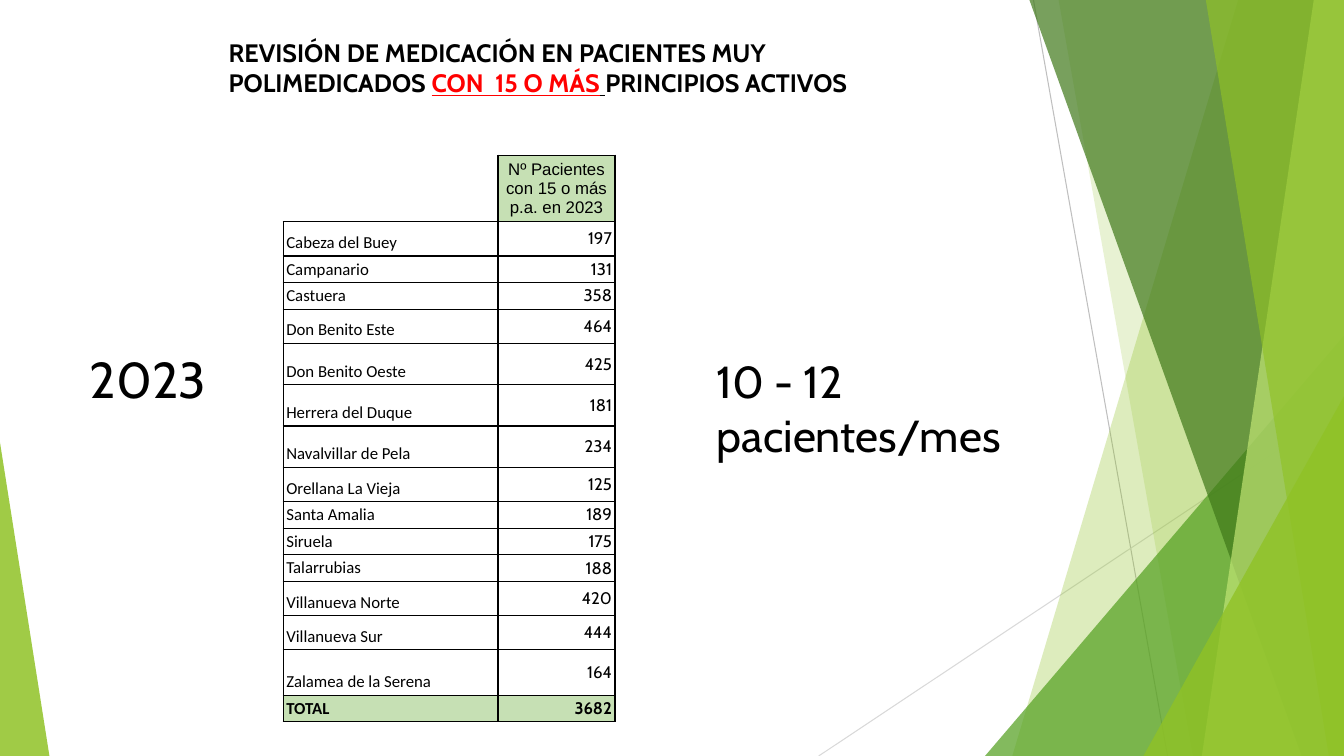
from lxml import etree
from pptx import Presentation
from pptx import util as u
from pptx.dml.color import RGBColor
from pptx.enum import shapes, text
from pptx.oxml import ns

WIDTH, HEIGHT = 13.33, 7.5
COLORS = {
    "black": "000000", "white": "FFFFFF", "red": "FF0000", "header": "C6E0B4",
    "lime": "90C226", "green": "54A021", "forest": "3F7819", "pale": "C0E474",
    "grey": "BFBFBF", "light grey": "D9D9D9",
}
# x1, y1, x2, y2, colour
RULES = [(10.25, 0, 11.58, 7.5, "grey"), (13.33, 4.03, 8.12, 7.5, "light grey")]
# Bands reach the right edge: ("band", top x, bottom x, colour, opacity %)
# Triangles stand on the bottom edge: ("triangle", left, width, height, apex, colour, opacity %)
FACETS = [
    ("band", 12.28, 10.04, "lime", 30),
    ("band", 10.5, 11.83, "lime", 20),
    ("triangle", 9.77, 3.56, 4.17, 1, "green", 72),
    ("band", 10.21, 12.91, "forest", 70),
    ("band", 13.03, 11.92, "pale", 70),
    ("band", 11.96, 13.18, "lime", 65),
    ("triangle", 11.34, 1.99, 3.57, 1, "lime", 80),
    ("triangle", 0, 0.49, 3.11, 0, "lime", 85),
]
HEADER = "Nº Pacientes con 15 o más p.a. en 2023"
# name, patients, row height
CENTRES = [
    ("Cabeza del Buey", 197, 0.34), ("Campanario", 131, 0.24),
    ("Castuera", 358, 0.24), ("Don Benito Este", 464, 0.34),
    ("Don Benito Oeste", 425, 0.41), ("Herrera del Duque", 181, 0.41),
    ("Navalvillar de Pela", 234, 0.41), ("Orellana La Vieja", 125, 0.34),
    ("Santa Amalia", 189, 0.24), ("Siruela", 175, 0.24),
    ("Talarrubias", 188, 0.24), ("Villanueva Norte", 420, 0.34),
    ("Villanueva Sur", 444, 0.34), ("Zalamea de la Serena", 164, 0.45),
    ("TOTAL", 3682, 0.24),
]
HEADER_HEIGHT = 0.66
COLUMNS = [2.13, 1.16]
# text, colour, underlined
TITLE = [
    ("REVISIÓN DE MEDICACIÓN EN PACIENTES MUY POLIMEDICADOS ", "black", False),
    ("CON  15 O MÁS", "red", True),
    (" ", "black", True),
    ("PRINCIPIOS ACTIVOS", "black", False),
]
# left, top, width, height, size, bold, spans
TEXTS = [
    (0.79, 3.4, 1.38, 0.71, 36, False, [("2023", "black", False)]),
    (7.01, 3.46, 3.29, 1.18, 32, False, [("10 - 12 pacientes/mes", "black", False)]),
    (2.17, 0.32, 6.67, 0.71, 18, True, TITLE),
]


def rgb(name):
    return RGBColor.from_string(COLORS[name])


def add_rule(page, x1, y1, x2, y2, color):
    rule = page.shapes.add_connector(
        shapes.MSO_CONNECTOR.STRAIGHT, *map(u.Inches, (x1, y1, x2, y2)))
    rule.line.color.rgb = rgb(color)
    rule.line.width = u.Pt(0.75)
    etree.SubElement(rule._element.spPr, ns.qn("a:effectLst"))


def add_band(page, top_x, bottom_x):
    outline = page.shapes.build_freeform(u.Inches(top_x), 0)
    corners = [(WIDTH, 0), (WIDTH, HEIGHT), (bottom_x, HEIGHT)]
    outline.add_line_segments([(u.Inches(x), u.Inches(y)) for x, y in corners])
    return outline.convert_to_shape()


def add_triangle(page, left, width, height, apex):
    triangle = page.shapes.add_shape(
        shapes.MSO_SHAPE.ISOSCELES_TRIANGLE,
        *map(u.Inches, (left, HEIGHT - height, width, height)))
    triangle.adjustments[0] = apex
    return triangle


def add_facet(page, kind, *details):
    *geometry, color, opacity = details
    facet = {"band": add_band, "triangle": add_triangle}[kind](page, *geometry)
    facet.shadow.inherit = False
    facet.line.fill.background()
    facet.fill.solid()
    facet.fill.fore_color.rgb = rgb(color)
    tint = facet._element.spPr.find(".//" + ns.qn("a:srgbClr"))
    etree.SubElement(tint, ns.qn("a:alpha"), val=str(opacity * 1000))


def add_text(page, left, top, width, height, size, bold, spans):
    box = page.shapes.add_textbox(*map(u.Inches, (left, top, width, height)))
    box.text_frame.word_wrap = True
    para = box.text_frame.paragraphs[0]
    para.font.name, para.font.size, para.font.bold = "Cabin", u.Pt(size), bold
    for words, color, underlined in spans:
        span = para.add_run()
        span.text = words
        span.font.color.rgb = rgb(color)
        span.font.underline = underlined


def set_borders(cell, sides):
    """Draw black lines on the given sides (from "LRTB") and none on the others."""
    properties = cell._tc.get_or_add_tcPr()
    for side in "LRTB":
        line = etree.SubElement(properties, ns.qn("a:ln" + side), w=str(u.Pt(1)))
        if side in sides:
            fill = etree.SubElement(line, ns.qn("a:solidFill"))
            etree.SubElement(fill, ns.qn("a:srgbClr"), val=COLORS["black"])
        else:
            etree.SubElement(line, ns.qn("a:noFill"))


def fill_cell(cell, words, font, align, anchor, fill, bold=False, sides="LRTB"):
    set_borders(cell, sides)
    cell.fill.solid()
    cell.fill.fore_color.rgb = rgb(fill)
    cell.margin_left = cell.margin_right = u.Inches(0.03)
    cell.margin_top = cell.margin_bottom = u.Inches(0.03)
    cell.vertical_anchor = anchor
    cell.text = words
    para = cell.text_frame.paragraphs[0]
    para.alignment = align
    para.font.name, para.font.size, para.font.bold = font, u.Pt(12), bold
    para.font.color.rgb = rgb("black")


def add_patient_table(page):
    heights = [HEADER_HEIGHT] + [height for _, _, height in CENTRES]
    table = page.shapes.add_table(
        len(heights), len(COLUMNS), u.Inches(2.81), u.Inches(1.54),
        u.Inches(sum(COLUMNS)), u.Inches(sum(heights))).table
    table.first_row = table.horz_banding = False
    for column, width in zip(table.columns, COLUMNS):
        column.width = u.Inches(width)
    for row, height in zip(table.rows, heights):
        row.height = u.Inches(height)

    align, anchor = text.PP_ALIGN, text.MSO_ANCHOR
    fill_cell(table.cell(0, 0), "", "Calibri", align.LEFT, anchor.BOTTOM, "white", sides="RB")
    fill_cell(table.cell(0, 1), HEADER, "Arial", align.CENTER, anchor.MIDDLE, "header")
    for index, (name, patients, _) in enumerate(CENTRES, start=1):
        total = index == len(CENTRES)
        fill = "header" if total else "white"
        fill_cell(table.cell(index, 0), name, "Calibri", align.LEFT, anchor.BOTTOM, fill, total)
        fill_cell(table.cell(index, 1), str(patients), "Cabin", align.RIGHT, anchor.MIDDLE,
                  fill, total)


def main():
    deck = Presentation()
    deck.slide_width, deck.slide_height = u.Inches(WIDTH), u.Inches(HEIGHT)
    page = deck.slides.add_slide(deck.slide_layouts[6])
    for rule in RULES:
        add_rule(page, *rule)
    for facet in FACETS:
        add_facet(page, *facet)
    add_patient_table(page)
    for item in TEXTS:
        add_text(page, *item)
    deck.save("out.pptx")


if __name__ == "__main__":
    main()
